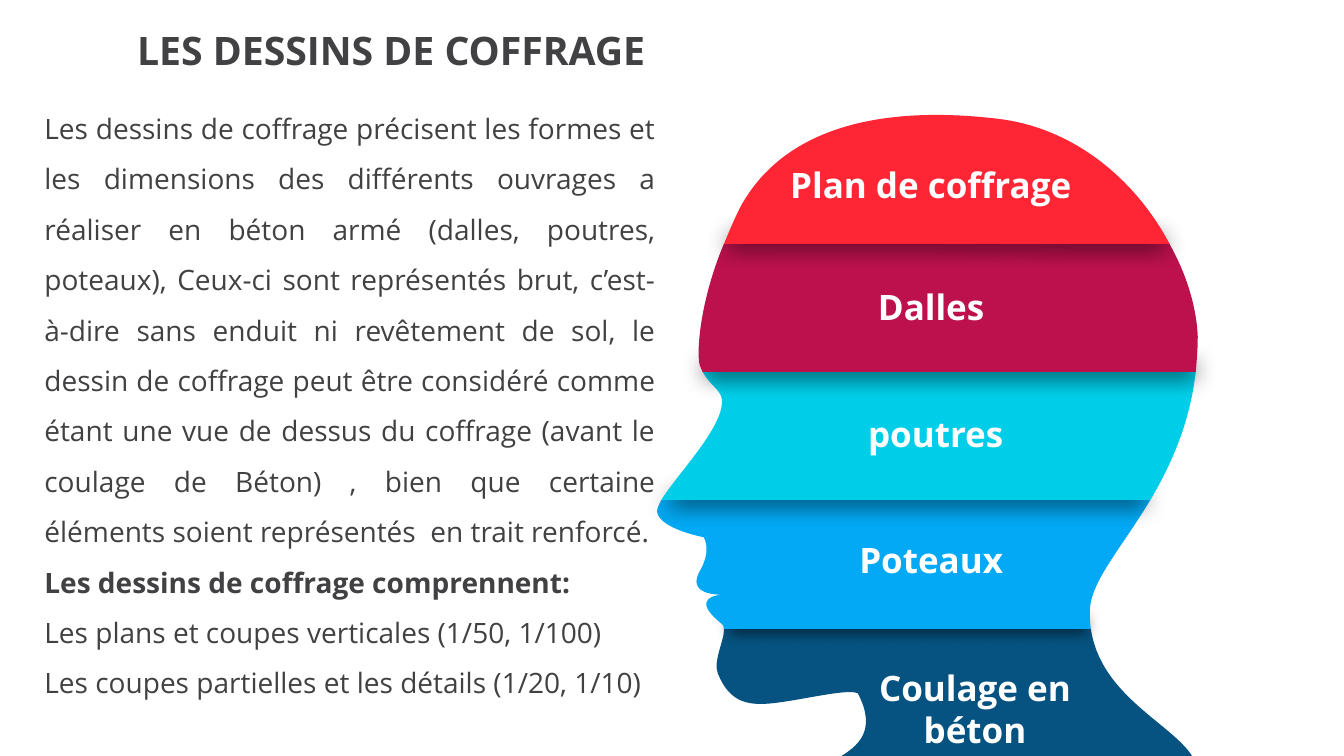
"""Build the slide on formwork drawings with a layered head diagram."""
import lxml.etree
import pptx
import pptx.dml.color
import pptx.enum.shapes
import pptx.enum.text
import pptx.oxml.ns
import pptx.util

COLORS = {"ink": "414042", "label": "FFFFFF", "shadow": "000000", "neck": "065381",
          "mouth": "03A9F4", "nose": "00CEE8", "brow": "BD114D", "crown": "FE2635"}
FONT = "Open Sans"
TITLE = "LES DESSINS DE COFFRAGE"
PARAGRAPHS = [
    ("Les dessins de coffrage précisent les formes et les dimensions des différents ouvrages "
     "a réaliser en béton armé (dalles, poutres, poteaux), Ceux-ci sont représentés brut, "
     "c’est-à-dire sans enduit ni revêtement de sol, le dessin de coffrage peut être considéré "
     "comme étant une vue de dessus du coffrage (avant le coulage de Béton) , bien que certaine "
     "éléments soient représentés  en trait renforcé.", False),
    ("Les dessins de coffrage comprennent:", True),
    ("Les plans et coupes verticales (1/50, 1/100)", False),
    ("Les coupes partielles et les détails (1/20, 1/10)", False),
]
TITLE_BOX = (1.36, 0.26, 5.19, 0.47)
BODY_BOX = (0.44, 0.94, 6.06, 6.51)
LABELS = [("Plan de coffrage", (7.82, 1.62, 2.82, 0.42)), ("Dalles", (8.7, 2.83, 1.07, 0.42)),
          ("poutres", (8.6, 4.09, 1.36, 0.42)), ("Poteaux", (8.51, 5.34, 1.45, 0.42)),
          ("Coulage en\nbéton", (8.71, 6.61, 1.92, 0.84))]
LIP_BOX = (7.24, 6.09, 3.53, 0.14)

# Each outline is a start point, then line ends (one point) or Bezier curves (three points).
BANDS = [
    {"color": "neck", "outline": [
        [(7.12, 6.68)], [(7.24, 6.98), (7.43, 7.01), (7.72, 6.97)],
        [(8.02, 6.93), (8.42, 6.83), (8.51, 6.88)], [(8.7, 7.25), (8.51, 7.4), (8.33, 7.51)],
        [(11.83, 7.51)], [(11.63, 7.18), (10.92, 6.91), (10.82, 6.24)], [(7.18, 6.24)],
        [(7.19, 6.34), (7.07, 6.56), (7.12, 6.68)]]},
    {"color": "mouth", "blur": 11, "drop": 3, "outline": [
        [(6.52, 5.09)], [(6.56, 5.25), (6.98, 5.33), (6.98, 5.33)],
        [(6.98, 5.33), (7.06, 5.45), (6.95, 5.65)], [(6.79, 5.91), (7.14, 5.9), (7.17, 5.9)],
        [(7.14, 5.9), (6.82, 5.92), (7.16, 6.19)], [(7.17, 6.2), (7.18, 6.21), (7.18, 6.24)],
        [(10.82, 6.24)], [(10.81, 6.18), (10.81, 6.12), (10.81, 6.05)],
        [(10.82, 5.77), (11.12, 5.44), (11.41, 4.96)], [(6.56, 4.96)],
        [(6.53, 5.02), (6.51, 5.06), (6.52, 5.09)]]},
    {"color": "nose", "blur": 16, "drop": 4,
     "edge": [[(6.75, 4.82)], [(11.35, 4.82)], [(11.35, 4.96)], [(6.58, 4.96)]],
     "outline": [
        [(6.97, 3.69)], [(7.04, 3.82), (7.15, 3.87), (7.16, 3.96)],
        [(7.19, 4.23), (6.71, 4.71), (6.56, 4.96)], [(11.41, 4.96)],
        [(11.61, 4.62), (11.8, 4.21), (11.86, 3.69)]]},
    {"color": "brow", "blur": 16, "drop": 4,
     "edge": [[(6.95, 3.54)], [(11.85, 3.54)], [(11.84, 3.69)], [(7.01, 3.69)]],
     "outline": [
        [(11.88, 3.34)], [(11.87, 3.07), (11.78, 2.74), (11.6, 2.42)], [(7.18, 2.42)],
        [(6.93, 3.02), (6.91, 3.52), (6.94, 3.62)], [(6.95, 3.65), (6.96, 3.67), (6.97, 3.69)],
        [(11.86, 3.69)], [(11.87, 3.58), (11.88, 3.46), (11.88, 3.34)]]},
    {"color": "crown", "blur": 16, "drop": 4,
     "edge": [[(7.25, 2.28)], [(11.49, 2.28)], [(11.6, 2.42)], [(7.19, 2.41)]],
     "outline": [
        [(9.91, 1.18)], [(8.67, 1.03), (7.75, 1.3), (7.34, 2.06)],
        [(7.28, 2.18), (7.23, 2.3), (7.18, 2.42)], [(11.6, 2.42)],
        [(11.29, 1.83), (10.7, 1.28), (9.91, 1.18)]]},
]


def rgb(name):
    return pptx.dml.color.RGBColor.from_string(COLORS[name])


def apply_format(target, values):
    for attribute, value in values.items():
        setattr(target, attribute, value)


def paint(part, color):
    part.fill.solid()
    part.fill.fore_color.rgb = rgb(color)
    part.line.fill.background()
    part.shadow.inherit = False


def add_outline(slide, outline, color):
    qn = pptx.oxml.ns.qn
    points = [tuple(map(pptx.util.Inches, point)) for segment in outline for point in segment]
    builder = slide.shapes.build_freeform(*points[0])
    builder.add_line_segments(points[1:], close=True)
    part = builder.convert_to_shape()
    paint(part, color)
    lines = iter(list(part._element.iter(qn("a:lnTo"))))
    for segment in outline[1:]:
        first, *others = [next(lines) for point in segment]
        if others:
            first.tag = qn("a:cubicBezTo")
            for line in others:
                first.append(line[0])
                line.getparent().remove(line)
    return part


def cast_shadow(part, blur, drop):
    qn = pptx.oxml.ns.qn
    effects = part._element.spPr.find(qn("a:effectLst"))
    shadow = lxml.etree.SubElement(
        effects, qn("a:outerShdw"), blurRad=str(pptx.util.Pt(blur)),
        dist=str(pptx.util.Pt(drop)), dir="5400000", algn="t", rotWithShape="0")
    tint = lxml.etree.SubElement(shadow, qn("a:srgbClr"), val=COLORS["shadow"])
    lxml.etree.SubElement(tint, qn("a:alpha"), val="64000")


def add_band(slide, band):
    color = band["color"]
    if "blur" not in band:
        add_outline(slide, band["outline"], color)
        return
    if "edge" in band:
        edge = add_outline(slide, band["edge"], color)
    else:
        edge = slide.shapes.add_shape(pptx.enum.shapes.MSO_SHAPE.RECTANGLE,
                                      *map(pptx.util.Inches, LIP_BOX))
        paint(edge, color)
    cast_shadow(edge, band["blur"], band["drop"])
    slide.shapes.add_group_shape([edge, add_outline(slide, band["outline"], color)])


def write(holder, box, paragraphs, size, color, wrap, layout):
    place = zip(("left", "top", "width", "height"), map(pptx.util.Inches, box))
    apply_format(holder, dict(place))
    frame = holder.text_frame
    apply_format(frame, {
        "margin_left": 0, "margin_top": 0, "margin_right": 0, "margin_bottom": 0,
        "word_wrap": wrap, "auto_size": pptx.enum.text.MSO_AUTO_SIZE.NONE,
        "vertical_anchor": pptx.enum.text.MSO_ANCHOR.TOP})
    frame.text = "\n".join(text for text, bold in paragraphs)
    for paragraph, (text, bold) in zip(frame.paragraphs, paragraphs):
        apply_format(paragraph, layout)
        for run in paragraph.runs:
            apply_format(run.font, {"name": FONT, "size": pptx.util.Pt(size), "bold": bold})
            run.font.color.rgb = rgb(color)


def main():
    align = pptx.enum.text.PP_ALIGN
    deck = pptx.Presentation()
    apply_format(deck, {"slide_width": pptx.util.Inches(13.33),
                        "slide_height": pptx.util.Inches(7.5)})
    slide = deck.slides.add_slide(deck.slide_layouts[1])
    body = slide.placeholders[1]
    write(slide.shapes.title, TITLE_BOX, [(TITLE, True)], 28, "ink", True,
          {"alignment": align.LEFT})
    write(body, BODY_BOX, PARAGRAPHS, 20, "ink", True,
          {"alignment": align.JUSTIFY, "line_spacing": 1.5, "space_before": pptx.util.Pt(0)})
    for paragraph in body.text_frame.paragraphs:
        properties = paragraph._p.get_or_add_pPr()
        properties.set("marL", "0")
        properties.set("indent", "0")
        lxml.etree.SubElement(properties, pptx.oxml.ns.qn("a:buNone"))

    for band in BANDS:
        add_band(slide, band)

    for text, box in LABELS:
        lines = [(line, True) for line in text.split("\n")]
        write(slide.shapes.add_textbox(0, 0, 0, 0), box, lines, 25, "label", False,
              {"alignment": align.CENTER})
    deck.save("out.pptx")


if __name__ == "__main__":
    main()
